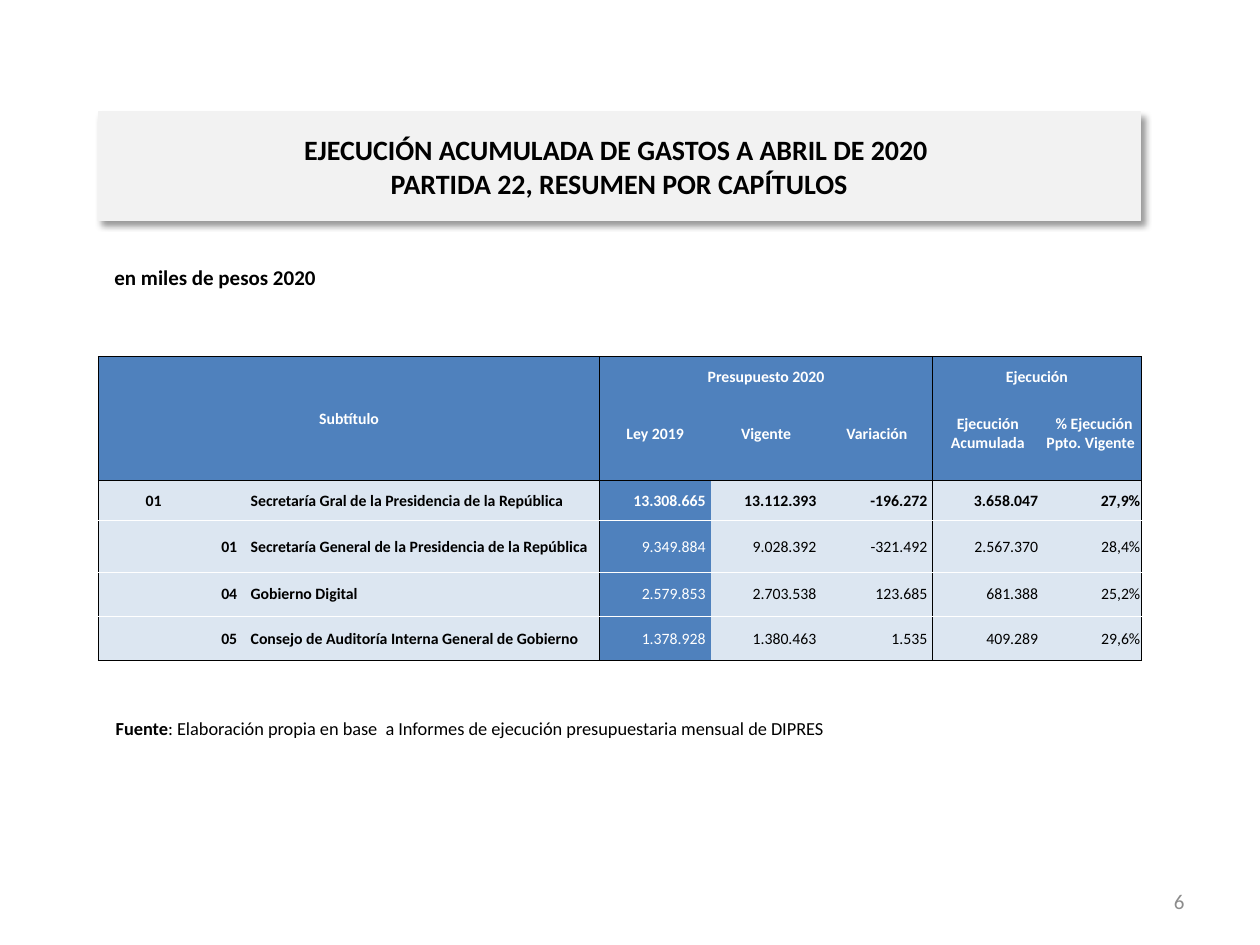
from typing import NamedTuple

from lxml import etree
from pptx import Presentation
from pptx import util as u
from pptx.dml.color import RGBColor
from pptx.enum import shapes, text
from pptx.oxml import ns

BLACK, WHITE, BLUE, PALE, GREY = "000000", "FFFFFF", "4F81BD", "DCE6F1", "F2F2F2"
COLUMNS = (0.88, 0.32, 2.78, 0.88, 0.88, 0.88, 0.88, 0.78)
ROWS = (0.24, 0.74, 0.32, 0.41, 0.35, 0.35)
GROUP_COLUMNS = (0, 3, 6, len(COLUMNS))
BLOCK_ROWS = (0, 2, len(ROWS))
HEADER_ROWS, LAW_COLUMN = 2, 3
ALIGN = {"l": text.PP_ALIGN.LEFT, "c": text.PP_ALIGN.CENTER, "r": text.PP_ALIGN.RIGHT}
COLUMN_ALIGN = "cclrrrrr"


class Header(NamedTuple):
    row: int
    col: int
    words: str
    rows: int = 1
    cols: int = 1


class Budget(NamedTuple):
    chapter: str
    program: str
    name: str
    law: str
    current: str
    change: str
    spent: str
    share: str


HEADERS = (
    Header(0, 0, "Subtítulo", 2, 3),
    Header(0, 3, "Presupuesto 2020", cols=3),
    Header(0, 6, "Ejecución", cols=2),
    Header(1, 3, "Ley 2019"),
    Header(1, 4, "Vigente"),
    Header(1, 5, "Variación"),
    Header(1, 6, "Ejecución Acumulada"),
    Header(1, 7, " % Ejecución Ppto. Vigente "),
)
BUDGETS = (
    Budget("01", "", "Secretaría Gral de la Presidencia de la República",
           "13.308.665", "13.112.393", "-196.272", "3.658.047", "27,9%"),
    Budget("", "01", "Secretaría General de la Presidencia de la República",
           "9.349.884", "9.028.392", "-321.492", "2.567.370", "28,4%"),
    Budget("", "04", "Gobierno Digital",
           "2.579.853", "2.703.538", "123.685", "681.388", "25,2%"),
    Budget("", "05", "Consejo de Auditoría Interna General de Gobierno",
           "1.378.928", "1.380.463", "1.535", "409.289", "29,6%"),
)


def rgb(value: str) -> RGBColor:
    return RGBColor.from_string(value)


def write(tf, words: str, *, size: float = 9, color: str = BLACK,
          bold: bool = False, align: str = "l") -> None:
    """Add words to the first paragraph, with a line break at each newline."""
    p = tf.paragraphs[0]
    p.alignment = ALIGN[align]
    for i, line in enumerate(words.split("\n")):
        if i:
            p.add_line_break()
        r = p.add_run()
        r.text = line
        r.font.name, r.font.size, r.font.bold = "Calibri", u.Pt(size), bold
        r.font.color.rgb = rgb(color)


def add_text(s, left: float, top: float, width: float, height: float):
    tf = s.shapes.add_textbox(*map(u.Inches, (left, top, width, height))).text_frame
    tf.word_wrap = True
    return tf


def add_title(s, words: str) -> None:
    sp = s.shapes.add_shape(shapes.MSO_SHAPE.RECTANGLE,
                            *map(u.Inches, (0.78, 0.89, 8.27, 0.86)))
    sp.fill.solid()
    sp.fill.fore_color.rgb = rgb(GREY)
    sp.line.color.rgb = rgb(GREY)
    sp.line.width = u.Pt(0.75)
    sp.shadow.inherit = False
    effects = sp._element.spPr.find(ns.qn("a:effectLst"))
    shadow = etree.SubElement(effects, ns.qn("a:outerShdw"), blurRad=str(u.Pt(4)),
                              dist=str(u.Pt(3)), dir=str(45 * 60000),
                              algn="tl", rotWithShape="0")
    color = etree.SubElement(shadow, ns.qn("a:srgbClr"), val=BLACK)
    etree.SubElement(color, ns.qn("a:alpha"), val="40000")
    sp.text_frame.word_wrap = True
    sp.text_frame.vertical_anchor = text.MSO_ANCHOR.MIDDLE
    write(sp.text_frame, words, size=16, bold=True, align="c")


def row_edge(row: int) -> str | None:
    """Colour of the rule above a row: black round blocks, white in the body."""
    if row in BLOCK_ROWS:
        return BLACK
    return WHITE if row > HEADER_ROWS else None


def column_edge(col: int) -> str | None:
    return BLACK if col in GROUP_COLUMNS else None


def set_borders(cell, row: int, col: int) -> None:
    edges = {
        "a:lnL": column_edge(col),
        "a:lnR": column_edge(col + cell.span_width),
        "a:lnT": row_edge(row),
        "a:lnB": row_edge(row + cell.span_height),
    }
    tc_pr = cell._tc.get_or_add_tcPr()
    for i, (tag, color) in enumerate(edges.items()):
        line = etree.Element(ns.qn(tag), w=str(u.Pt(0.5)))
        if color:
            fill = etree.SubElement(line, ns.qn("a:solidFill"))
            etree.SubElement(fill, ns.qn("a:srgbClr"), val=color)
        else:
            etree.SubElement(line, ns.qn("a:noFill"))
        tc_pr.insert(i, line)


def add_budget_table(s) -> None:
    table = s.shapes.add_table(len(ROWS), len(COLUMNS), u.Inches(0.78), u.Inches(2.83),
                               u.Inches(sum(COLUMNS)), u.Inches(sum(ROWS))).table
    for column, width in zip(table.columns, COLUMNS):
        column.width = u.Inches(width)
    for row, height in zip(table.rows, ROWS):
        row.height = u.Inches(height)
    for h in HEADERS:
        if h.rows * h.cols > 1:
            table.cell(h.row, h.col).merge(
                table.cell(h.row + h.rows - 1, h.col + h.cols - 1))

    for row in range(len(ROWS)):
        for col in range(len(COLUMNS)):
            cell = table.cell(row, col)
            blue = row < HEADER_ROWS or col == LAW_COLUMN
            cell.fill.solid()
            cell.fill.fore_color.rgb = rgb(BLUE if blue else PALE)
            cell.margin_left = cell.margin_right = cell.margin_top = u.Inches(0.01)
            cell.margin_bottom = 0
            cell.vertical_anchor = text.MSO_ANCHOR.MIDDLE
            set_borders(cell, row, col)

    for h in HEADERS:
        cell = table.cell(h.row, h.col)
        if h.row == 0 and h.rows == 1:
            cell.vertical_anchor = text.MSO_ANCHOR.BOTTOM
        write(cell.text_frame, h.words, color=WHITE, bold=True, align="c")
    for row, budget in enumerate(BUDGETS, HEADER_ROWS):
        for col, words in enumerate(budget):
            cell = table.cell(row, col)
            if LAW_COLUMN <= col < len(COLUMNS) - 1:
                cell.margin_right = u.Inches(0.04)
            write(cell.text_frame, words, align=COLUMN_ALIGN[col],
                  color=WHITE if col == LAW_COLUMN else BLACK,
                  bold=col < LAW_COLUMN or bool(budget.chapter))


def main() -> None:
    prs = Presentation()
    prs.slide_width, prs.slide_height = u.Inches(10), u.Inches(7.5)
    s = prs.slides.add_slide(prs.slide_layouts[6])
    add_title(s, "EJECUCIÓN ACUMULADA DE GASTOS A ABRIL DE 2020 \n"
                 "PARTIDA 22, RESUMEN POR CAPÍTULOS")
    number = add_text(s, 7.17, 6.95, 2.33, 0.4)
    number.vertical_anchor = text.MSO_ANCHOR.MIDDLE
    write(number, "6", size=12, color="8C8C8C", align="r")
    source = add_text(s, 0.82, 5.64, 7.72, 0.4)
    write(source, "Fuente", size=10.5, bold=True)
    write(source, ": Elaboración propia en base  a Informes de ejecución "
                  "presupuestaria mensual de DIPRES", size=10.5)
    write(add_text(s, 0.81, 2.05, 8.19, 0.36), "en miles de pesos 2020",
          size=12, bold=True)
    add_budget_table(s)
    prs.save("out.pptx")


if __name__ == "__main__":
    main()
